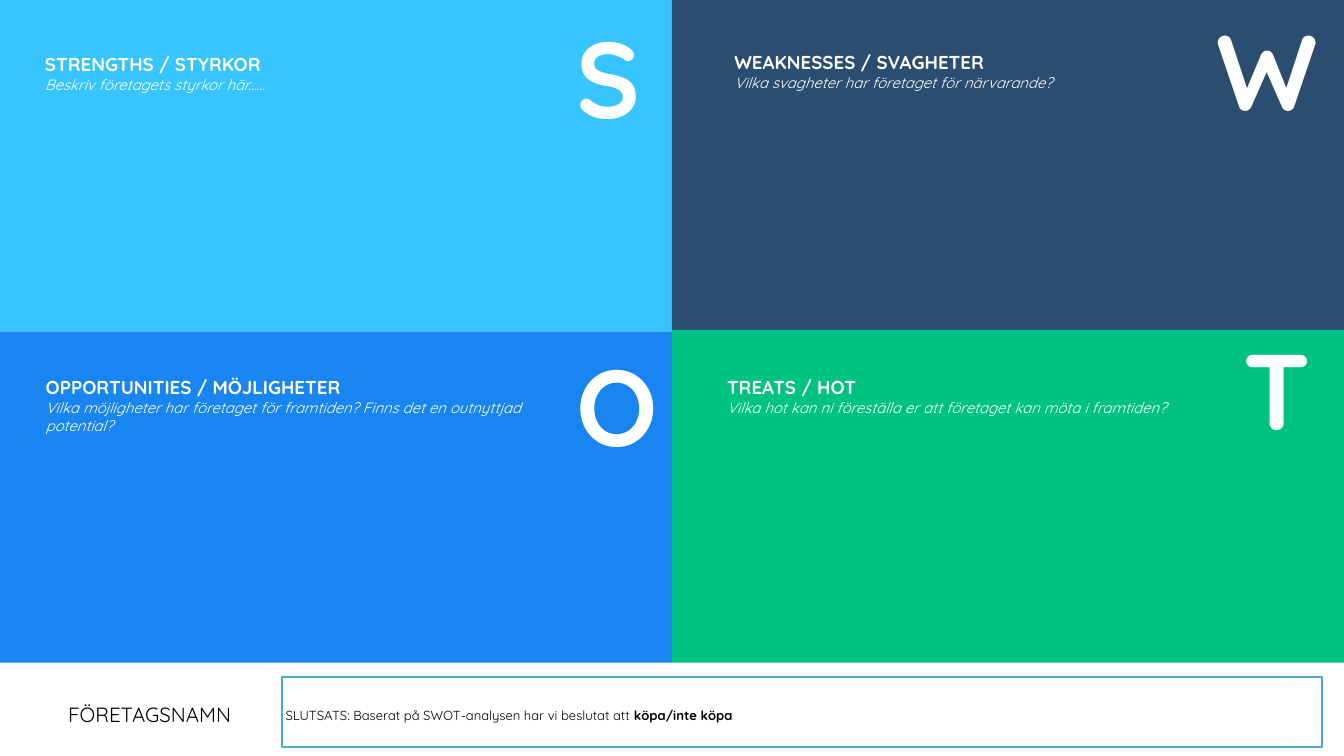
"""Build a one-page SWOT analysis slide with four coloured quadrants."""
from pptx import Presentation
from pptx.dml.color import RGBColor
from pptx.enum.shapes import MSO_SHAPE as Shape
from pptx.enum.text import MSO_ANCHOR as Anchor, MSO_AUTO_SIZE as AutoSize, PP_ALIGN as Align
from pptx.util import Inches, Pt

COLORS = {
    "strengths": "36C5FF",
    "weaknesses": "2A4D70",
    "opportunities": "1885F1",
    "threats": "00C282",
    "white": "FFFFFF",
    "black": "000000",
    "border": "4BACC6",
}

QUADRANTS = [
    ("strengths", (0, 0, 10, 4.93), (0.57, 0.69, 7.91, 4.04), (8.48, 0.12), "S",
     "STRENGTHS / STYRKOR", "Beskriv företagets styrkor här......"),
    ("weaknesses", (10, -0.02, 10, 4.93), (10.83, 0.66, 7.91, 3.5), (18.01, 0.02), "W",
     "WEAKNESSES / SVAGHETER", "Vilka svagheter har företaget för närvarande?"),
    ("opportunities", (0, 4.93, 10, 4.93), (0.58, 5.5, 7.91, 4.04), (8.48, 5), "O",
     "OPPORTUNITIES / MÖJLIGHETER",
     "Vilka möjligheter har företaget för framtiden? Finns det en outnyttjad potential?"),
    ("threats", (10, 4.91, 10, 4.95), (10.72, 5.5, 7.91, 4.04), (18.41, 4.76), "T",
     "TREATS / HOT", "Vilka hot kan ni föreställa er att företaget kan möta i framtiden?"),
]


class SwotSlide:
    """Holds the text style and the slide being built."""

    font = "Quicksand"
    letter_size = (1.42, 2.04)

    def __init__(self, slide):
        """Keep the slide to draw on."""
        self.slide = slide

    def color(self, name):
        """Return a named colour."""
        return RGBColor.from_string(COLORS[name])

    def add_run(self, paragraph, text, size, color="white", bold=False, italic=False):
        """Add one styled run."""
        run = paragraph.add_run()
        run.text = text
        font = run.font
        font.name, font.size = self.font, Pt(size)
        font.bold, font.italic = bold, italic
        font.color.rgb = self.color(color)

    def set_frame(self, frame, across, down, anchor=Anchor.TOP, fit=AutoSize.SHAPE_TO_FIT_TEXT):
        """Set wrapping, insets, anchor and fitting of a text frame."""
        frame.word_wrap = True
        frame.auto_size = fit
        frame.margin_left = frame.margin_right = Inches(across)
        frame.margin_top = frame.margin_bottom = Inches(down)
        frame.vertical_anchor = anchor

    def panel(self, box, fill, line=None):
        """Add a filled rectangle, outlined if a line colour is given."""
        panel = self.slide.shapes.add_shape(Shape.RECTANGLE, *map(Inches, box))
        panel.shadow.inherit = False
        panel.fill.solid()
        panel.fill.fore_color.rgb = self.color(fill)
        if line:
            panel.line.color.rgb = self.color(line)
            panel.line.width = Pt(2)
        else:
            panel.line.fill.background()
        return panel

    def text(self, box, lines, across=0.1, down=0.1):
        """Add a text box with one styled run per paragraph."""
        frame = self.slide.shapes.add_textbox(*map(Inches, box)).text_frame
        self.set_frame(frame, across, down)
        for index, (text, size, bold, italic) in enumerate(lines):
            paragraph = frame.add_paragraph() if index else frame.paragraphs[0]
            self.add_run(paragraph, text, size, bold=bold, italic=italic)

    def letter(self, corner, initial):
        """Add the large initial of a quadrant."""
        self.text(corner + self.letter_size, [(initial, 115, True, False)], down=0.05)

    def footer_text(self, shape, runs, size, align):
        """Write one centred-height line into a footer shape."""
        frame = shape.text_frame
        self.set_frame(frame, 0.06, 0.06, Anchor.MIDDLE, AutoSize.NONE)
        paragraph = frame.paragraphs[0]
        paragraph.alignment, paragraph.line_spacing = align, 1.4
        for text, bold in runs:
            self.add_run(paragraph, text, size, "black", bold)

    def company(self, box, name):
        """Place the company name in the title placeholder."""
        title = self.slide.shapes.title
        title.left, title.top, title.width, title.height = map(Inches, box)
        title.fill.solid()
        title.fill.fore_color.rgb = self.color("white")
        self.footer_text(title, [(name, False)], 22, Align.CENTER)

    def conclusion(self, box, runs):
        """Add the outlined conclusion."""
        self.footer_text(self.panel(box, "white", "border"), runs, 14, Align.LEFT)


def main():
    """Build and save the slide."""
    deck = Presentation()
    deck.slide_width, deck.slide_height = Inches(20), Inches(11.25)
    swot = SwotSlide(deck.slides.add_slide(deck.slide_layouts[5]))
    for fill, area, *_ in QUADRANTS:
        swot.panel(area, fill)
    for _, _, body, corner, initial, heading, prompt in QUADRANTS:
        swot.text(body, [(heading, 20, True, False), (prompt, 16, False, True)])
        swot.letter(corner, initial)
    swot.company((0, 10.03, 4.45, 1.06), "FÖRETAGSNAMN")
    swot.conclusion((4.19, 10.07, 15.48, 1.05), [
        ("SLUTSATS: Baserat på SWOT-analysen har vi beslutat att ", False),
        ("köpa/inte köpa", True),
    ])
    deck.save("out.pptx")


if __name__ == "__main__":
    main()
